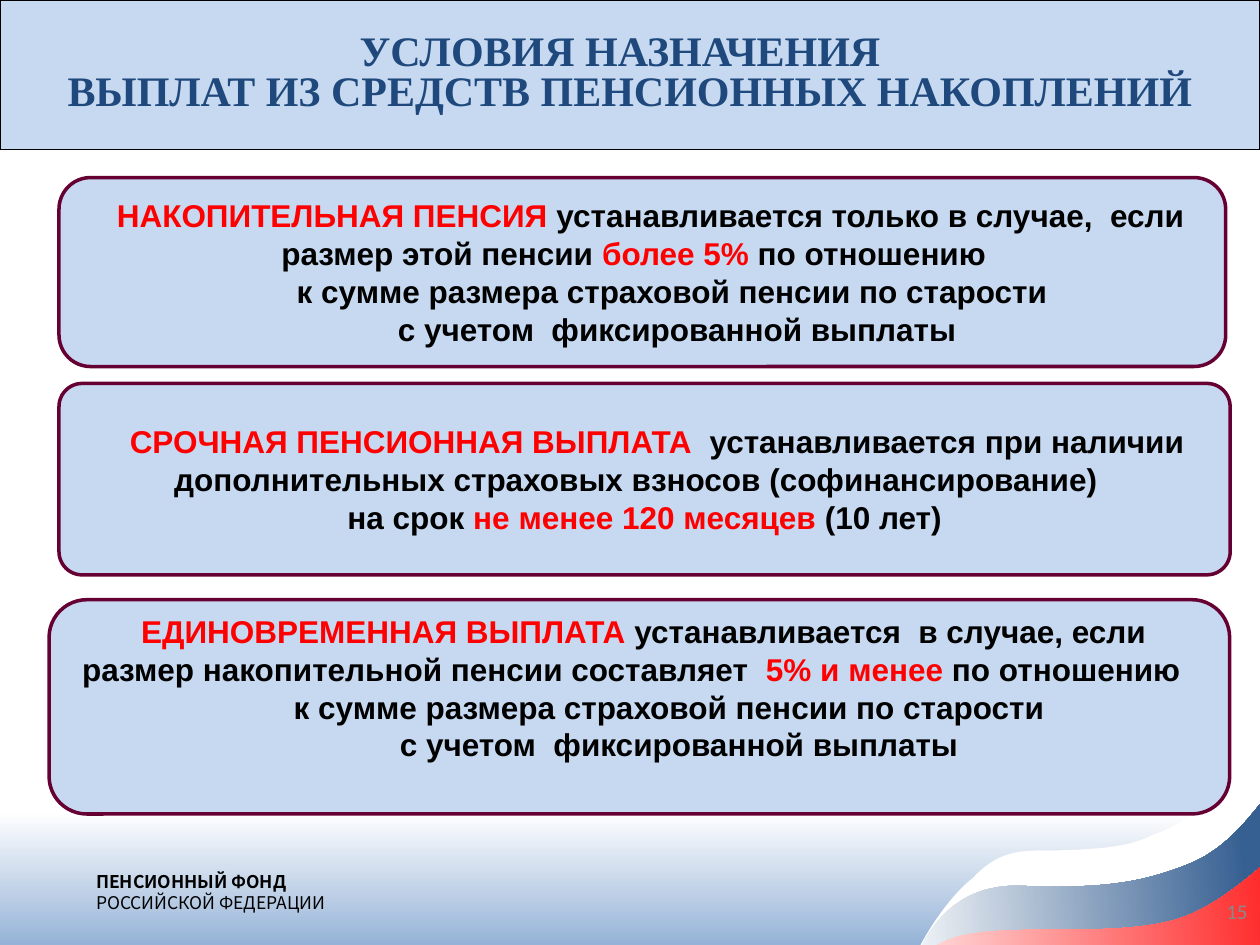
from dataclasses import dataclass
from math import cos, radians, sin

from lxml.etree import SubElement
from pptx import Presentation
from pptx.dml.color import RGBColor as Rgb
from pptx.enum.shapes import MSO_SHAPE as Preset
from pptx.enum.text import MSO_ANCHOR as Anchor, PP_ALIGN as Align
from pptx.oxml.ns import qn
from pptx.util import Cm, Pt


@dataclass(frozen=True)
class Theme:
    panel: str = "C6D9F1"
    heading: str = "1F497D"
    border: str = "660033"
    accent: str = "FF0000"
    ink: str = "000000"
    paper: str = "FFFFFF"
    band: str = "95B3D7"
    blue: str = "376092"
    number: str = "898989"
    title_size: float = 24
    body_size: float = 18
    number_size: float = 12
    footer_size: float = 10


THEME = Theme()


@dataclass(frozen=True)
class Span:
    text: str
    color: str = THEME.ink
    size: float = THEME.body_size
    font: str = "Arial"
    bold: bool = True


@dataclass(frozen=True)
class Para:
    spans: tuple[Span, ...]
    left: float = 0
    right: float = 0
    first: float = 0
    align: Align = Align.CENTER
    spacing: float = 1.0


@dataclass(frozen=True)
class Panel:
    left: float
    top: float
    width: float
    height: float
    corner: float
    paras: tuple[Para, ...]
    bottom_inset: float = 0.13


@dataclass(frozen=True)
class Wave:
    box: tuple[float, float, float, float]
    start: tuple[float, float]
    curves: tuple[tuple[float, ...], ...]
    end_color: str
    end_stop: float = 1.0


def red(text: str) -> Span:
    return Span(text, THEME.accent)


def sum_paras(last_left: float) -> tuple[Para, ...]:
    return (
        Para((Span("к сумме размера страховой пенсии по старости"),), left=1.2),
        Para((Span("с учетом  фиксированной выплаты"),), left=last_left),
    )


PANELS = (
    Panel(1.19, 7.73, 23.61, 3.86, 0.121, (
        Para((red("СРОЧНАЯ ПЕНСИОННАЯ ВЫПЛАТА  "),
              Span("устанавливается при наличии дополнительных "
                   "страховых взносов (софинансирование)")), right=0.35, first=0.85),
        Para((Span("на срок "), red("не менее 120 месяцев "), Span("(10 лет)"))))),
    Panel(1.19, 3.58, 23.52, 3.81, 0.167, (
        Para((red("НАКОПИТЕЛЬНАЯ ПЕНСИЯ "),
              Span("устанавливается только в случае,  если размер этой пенсии "),
              red("более 5%"), Span(" по отношению")), right=0.35, first=0.68),
        *sum_paras(1.4))),
    Panel(0.99, 12.09, 23.8, 4.32, 0.176, (
        Para((red("ЕДИНОВРЕМЕННАЯ ВЫПЛАТА "),
              Span("устанавливается  в случае, если размер накопительной пенсии составляет  "),
              red("5% и менее "), Span("по отношению")), right=0.33, first=0.5),
        *sum_paras(1.6)), bottom_inset=0.9),
)

CM_PER_UNIT = 2.54
WAVE_TILT = -4.5
WAVES = (
    Wave((7.14, 5.49, 3.39, 2.16), (7.24, 7.76), (
        (7.16, 7.68, 7.49, 7.14, 7.72, 6.97), (7.94, 6.73, 8.14, 6.75, 8.38, 6.75),
        (8.62, 6.74, 8.95, 6.74, 9.16, 6.62), (9.36, 6.57, 9.73, 6.27, 9.9, 6.15),
        (10.07, 6.03, 10.09, 6, 10.17, 5.87), (10.26, 5.75, 10.38, 5.25, 10.42, 5.39),
        (10.46, 5.52, 10.56, 6.44, 10.41, 6.7), (10.27, 6.97, 9.96, 6.88, 9.55, 6.96),
        (9.14, 7.04, 8.58, 7.31, 8.19, 7.44), (7.8, 7.58, 7.32, 7.84, 7.24, 7.76),
    ), THEME.paper),
    Wave((7.14, 5.85, 3.31, 1.78), (7.22, 7.74), (
        (7.26, 7.65, 7.41, 7.01, 8.1, 7.03), (8.79, 7.06, 9.1, 6.99, 9.43, 6.86),
        (9.76, 6.73, 9.96, 6.43, 10.11, 6.24), (10.26, 6.06, 10.32, 5.62, 10.36, 5.75),
        (10.4, 5.89, 10.5, 6.81, 10.35, 7.07), (10.21, 7.34, 9.9, 7.25, 9.48, 7.33),
        (9.07, 7.41, 8.25, 7.48, 7.87, 7.55), (7.49, 7.62, 7.18, 7.83, 7.22, 7.74),
    ), THEME.blue, 0.8),
    Wave((6.84, 6.44, 4.11, 1.61), (6.93, 8.16), (
        (7.19, 7.99, 7.1, 7.65, 7.5, 7.47), (7.89, 7.29, 8.86, 7.47, 9.39, 7.28),
        (9.91, 7.09, 10.41, 6.44, 10.66, 6.33), (10.91, 6.22, 10.9, 6.36, 10.89, 6.59),
        (10.88, 6.82, 11.07, 7.46, 10.59, 7.71), (10.11, 7.95, 8.64, 7.97, 8.03, 8.04),
        (7.42, 8.12, 6.76, 8.3, 6.93, 8.16),
    ), THEME.accent, 0.92),
)


def fill_solid(shape, color: str) -> None:
    shape.fill.solid()
    shape.fill.fore_color.rgb = Rgb.from_string(color)


def fill_gradient(shape, color: str, stop: float = 1.0, angle: float = 0) -> None:
    shape.fill.gradient()
    shape.fill.gradient_angle = angle
    first, last = shape.fill.gradient_stops
    first.color.rgb, first.position = Rgb.from_string(THEME.paper), 0
    last.color.rgb, last.position = Rgb.from_string(color), stop


def set_line(shape, color: str, width: float) -> None:
    shape.line.color.rgb = Rgb.from_string(color)
    shape.line.width = Pt(width)


def write(frame, paras: tuple[Para, ...], anchor: Anchor = Anchor.MIDDLE) -> None:
    frame.word_wrap = True
    frame.vertical_anchor = anchor
    for index, item in enumerate(paras):
        para = frame.paragraphs[0] if index == 0 else frame.add_paragraph()
        para.alignment, para.line_spacing = item.align, item.spacing
        properties = para._p.get_or_add_pPr()
        for key, length in (("marL", item.left), ("marR", item.right), ("indent", item.first)):
            properties.set(key, str(Cm(length)))
        for span in item.spans:
            run = para.add_run()
            run.text = span.text
            run.font.name, run.font.size, run.font.bold = span.font, Pt(span.size), span.bold
            run.font.color.rgb = Rgb.from_string(span.color)


def add_wave(page, wave: Wave) -> None:
    left, top, width, height = (Cm(CM_PER_UNIT * side) for side in wave.box)
    turn = radians(-WAVE_TILT)

    def level(x: float, y: float) -> tuple[int, int]:
        dx = Cm(CM_PER_UNIT * x) - left - width / 2
        dy = Cm(CM_PER_UNIT * y) - top - height / 2
        return (round(width / 2 + dx * cos(turn) - dy * sin(turn)),
                round(height / 2 + dx * sin(turn) + dy * cos(turn)))

    builder = page.shapes.build_freeform(*level(*wave.start))
    builder.add_line_segments([level(*curve[4:]) for curve in wave.curves])
    shape = builder.convert_to_shape()
    shape.left, shape.top, shape.width, shape.height = left, top, width, height
    shape.rotation = WAVE_TILT
    outline = next(shape._element.iter(qn("a:path")))
    outline.set("w", str(width))
    outline.set("h", str(height))
    for part in list(outline):
        outline.remove(part)
    segments = [("a:moveTo", wave.start)] + [("a:cubicBezTo", curve) for curve in wave.curves]
    for tag, values in segments:
        segment = SubElement(outline, qn(tag))
        for point in zip(values[::2], values[1::2]):
            x, y = level(*point)
            SubElement(segment, qn("a:pt"), x=str(x), y=str(y))
    SubElement(outline, qn("a:close"))
    shape.shadow.inherit = False
    shape.line.fill.background()
    fill_gradient(shape, wave.end_color, wave.end_stop)


def add_panel(page, panel: Panel) -> None:
    shape = page.shapes.add_shape(Preset.ROUNDED_RECTANGLE, Cm(panel.left), Cm(panel.top),
                                  Cm(panel.width), Cm(panel.height))
    shape.adjustments[0] = panel.corner
    shape.shadow.inherit = False
    fill_solid(shape, THEME.panel)
    set_line(shape, THEME.border, 2)
    shape.text_frame.margin_bottom = Cm(panel.bottom_inset)
    write(shape.text_frame, panel.paras)


def add_title(page) -> None:
    title = page.shapes.title
    title.left, title.top, title.width, title.height = Cm(0), Cm(0), Cm(25.4), Cm(3.01)
    fill_solid(title, THEME.panel)
    set_line(title, THEME.ink, 0.75)
    lines = (("УСЛОВИЯ НАЗНАЧЕНИЯ", 0.4), ("ВЫПЛАТ ИЗ СРЕДСТВ ПЕНСИОННЫХ НАКОПЛЕНИЙ", 0))
    write(title.text_frame, tuple(
        Para((Span(text, THEME.heading, THEME.title_size, "Times New Roman"),),
             right=right, spacing=0.8) for text, right in lines))


def add_footer(page) -> None:
    band = page.shapes.add_shape(Preset.RECTANGLE, Cm(0), Cm(16.36), Cm(25.4), Cm(2.69))
    band.shadow.inherit = False
    band.line.fill.background()
    fill_gradient(band, THEME.band, angle=270)
    for wave in WAVES:
        add_wave(page, wave)
    frame = page.shapes.add_textbox(Cm(1.94), Cm(17.55), Cm(4.8), Cm(0.86)).text_frame
    frame.margin_left = frame.margin_right = frame.margin_top = frame.margin_bottom = 0
    lines = (("ПЕНСИОННЫЙ ФОНД", True), ("РОССИЙСКОЙ ФЕДЕРАЦИИ", False))
    write(frame, tuple(
        Para((Span(text, size=THEME.footer_size, font="Noto Sans CJK KR", bold=bold),),
             align=Align.LEFT) for text, bold in lines), Anchor.TOP)


def add_number(page) -> None:
    box = page.shapes.add_textbox(Cm(24.13), Cm(18.06), Cm(1.27), Cm(0.61))
    span = Span("15", THEME.number, THEME.number_size, "Calibri", False)
    write(box.text_frame, (Para((span,), align=Align.RIGHT),))


def main() -> None:
    deck = Presentation()
    deck.slide_width, deck.slide_height = Cm(25.4), Cm(19.05)
    page = deck.slides.add_slide(deck.slide_layouts[5])
    add_footer(page)
    add_title(page)
    for panel in PANELS:
        add_panel(page, panel)
    add_number(page)
    deck.save("out.pptx")


if __name__ == "__main__":
    main()
